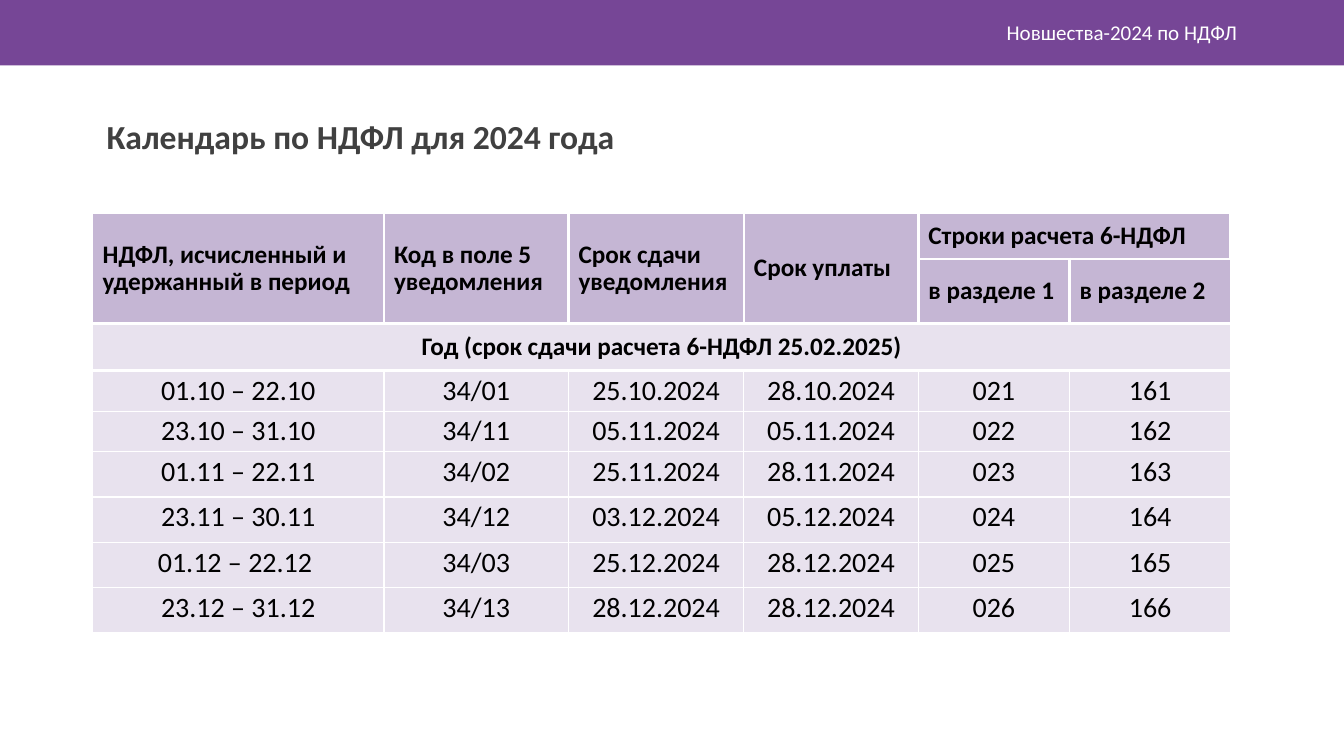
from lxml.etree import SubElement
from pptx import Presentation
from pptx.dml.color import RGBColor
from pptx.enum.shapes import MSO_SHAPE
from pptx.enum.text import MSO_ANCHOR, PP_ALIGN
from pptx.oxml.ns import qn
from pptx.util import Pt

COLORS = {
    "band": "764696",
    "cell": "8D6FAB",
    "white": "FFFFFF",
    "title": "404040",
    "text": "000000",
}
FONT = "Calibri"
SECTION_NAME = "Новшества-2024 по НДФЛ"
TITLE = "Календарь по НДФЛ для 2024 года"
HEADERS = [
    ((0, 0), (1, 0), "НДФЛ, исчисленный и удержанный в период"),
    ((0, 1), (1, 1), "Код в поле 5 уведомления"),
    ((0, 2), (1, 2), "Срок сдачи уведомления"),
    ((0, 3), (1, 3), "Срок уплаты"),
    ((0, 4), (0, 5), "Строки расчета 6-НДФЛ"),
    ((1, 4), (1, 4), "в разделе 1"),
    ((1, 5), (1, 5), "в разделе 2"),
]
YEAR_HEADING = "Год (срок сдачи расчета 6-НДФЛ 25.02.2025)"
CALENDAR = [
    ("01.10 – 22.10", "34/01", "25.10.2024", "28.10.2024", "021", "161"),
    ("23.10 – 31.10", "34/11", "05.11.2024", "05.11.2024", "022", "162"),
    ("01.11 – 22.11", "34/02", "25.11.2024", "28.11.2024", "023", "163"),
    ("23.11 – 30.11", "34/12", "03.12.2024", "05.12.2024", "024", "164"),
    ("01.12 – 22.12 ", "34/03", "25.12.2024", "28.12.2024", "025", "165"),
    ("23.12 – 31.12", "34/13", "28.12.2024", "28.12.2024", "026", "166"),
]
COLUMN_WIDTHS = [208.1, 131.8, 125.3, 124.6, 108, 115.2]
ROW_HEIGHTS = [32.4, 32.4, 33.8, 28.8, 28.8, 32.4, 32.4, 32.4, 32.4]
HEADER_ROWS = 2
FIRST_CALENDAR_ROW = 3
THIN, THICK = 1, 2.25


def write(frame, text, size, color, bold=False, align=PP_ALIGN.LEFT, spacing=None, after=0):
    """Put one formatted run into the first paragraph of a text frame."""
    frame.word_wrap = True
    paragraph = frame.paragraphs[0]
    paragraph.alignment = align
    paragraph.line_spacing = spacing
    paragraph.space_after = Pt(after)
    run = paragraph.add_run()
    run.text = text
    run.font.name = FONT
    run.font.size = Pt(size)
    run.font.bold = bold
    run.font.color.rgb = RGBColor.from_string(COLORS[color])


def style_cell(cell, row, column):
    """Give a cell its white borders and translucent fill."""
    in_header = row < HEADER_ROWS
    last_column = len(COLUMN_WIDTHS) - 1
    thick_edges = {
        "a:lnL": in_header and column > 0,
        "a:lnR": in_header and column < last_column,
        "a:lnT": 1 <= row <= FIRST_CALENDAR_ROW,
        "a:lnB": row < FIRST_CALENDAR_ROW,
    }
    properties = cell._tc.get_or_add_tcPr()
    for edge, thick in thick_edges.items():
        line = SubElement(properties, qn(edge), w=str(Pt(THICK if thick else THIN)))
        line_fill = SubElement(line, qn("a:solidFill"))
        SubElement(line_fill, qn("a:srgbClr"), val=COLORS["white"])
    cell.fill.solid()
    cell.fill.fore_color.rgb = RGBColor.from_string(COLORS["cell"])
    fill_color = properties.find(qn("a:solidFill")).find(qn("a:srgbClr"))
    SubElement(fill_color, qn("a:alpha"), val="50000" if in_header else "20000")


def add_heading(slide):
    """Draw the top band, its label and the slide title."""
    band = slide.shapes.add_shape(MSO_SHAPE.RECTANGLE, 0, 0, Pt(960), Pt(46.8))
    band.shadow.inherit = False
    band.fill.solid()
    band.fill.fore_color.rgb = RGBColor.from_string(COLORS["band"])
    band.line.fill.background()

    label = slide.shapes.add_textbox(Pt(251.3), Pt(8.6), Pt(639.4), Pt(28.8))
    label.text_frame.vertical_anchor = MSO_ANCHOR.MIDDLE
    write(label.text_frame, SECTION_NAME, 15, "white", align=PP_ALIGN.RIGHT)

    title = slide.shapes.add_textbox(Pt(69.1), Pt(82.8), Pt(821.5), Pt(409))
    write(title.text_frame, TITLE, 24, "title", bold=True, spacing=0.9)


def add_calendar(slide):
    """Build the calendar table."""
    table = slide.shapes.add_table(
        len(ROW_HEIGHTS), len(COLUMN_WIDTHS), Pt(66.2), Pt(152.6),
        Pt(sum(COLUMN_WIDTHS)), Pt(sum(ROW_HEIGHTS)),
    ).table
    table.first_row = False
    table.horz_banding = False
    for column, width in zip(table.columns, COLUMN_WIDTHS):
        column.width = Pt(width)
    for row_index, height in enumerate(ROW_HEIGHTS):
        table.rows[row_index].height = Pt(height)
        for column_index in range(len(COLUMN_WIDTHS)):
            style_cell(table.cell(row_index, column_index), row_index, column_index)

    year_row = (HEADER_ROWS, 0), (HEADER_ROWS, len(COLUMN_WIDTHS) - 1), YEAR_HEADING
    for start, end, text in HEADERS + [year_row]:
        cell = table.cell(*start)
        if start != end:
            cell.merge(table.cell(*end))
        cell.vertical_anchor = MSO_ANCHOR.MIDDLE
        align = PP_ALIGN.CENTER if text == YEAR_HEADING else PP_ALIGN.LEFT
        write(cell.text_frame, text, 18, "text", True, align, 0.9, 8)

    for row_index, values in enumerate(CALENDAR, FIRST_CALENDAR_ROW):
        for column_index, text in enumerate(values):
            frame = table.cell(row_index, column_index).text_frame
            write(frame, text, 20, "text", False, PP_ALIGN.CENTER, 0.9, 8)


def main():
    """Create the presentation and save it."""
    presentation = Presentation()
    presentation.slide_width = Pt(960)
    presentation.slide_height = Pt(540)
    slide = presentation.slides.add_slide(presentation.slide_layouts[6])
    add_heading(slide)
    add_calendar(slide)
    presentation.save("out.pptx")


if __name__ == "__main__":
    main()
